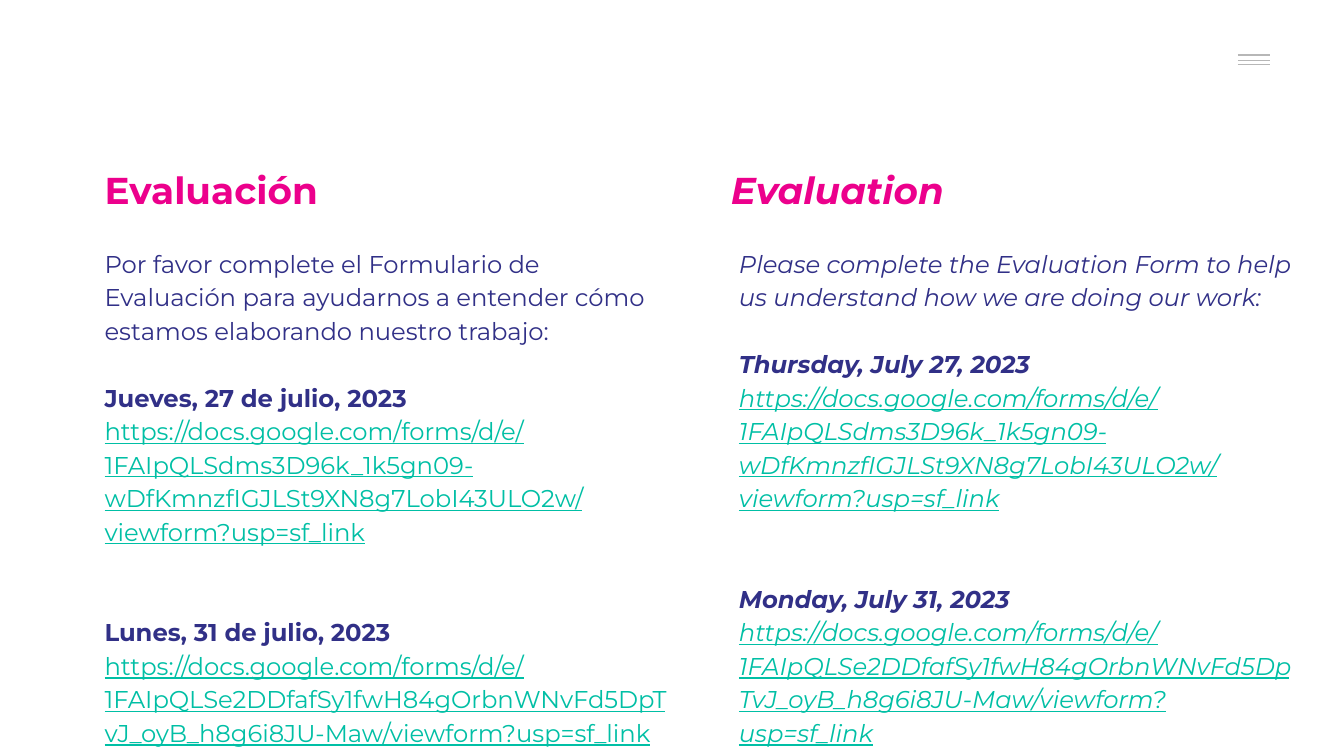
from dataclasses import dataclass

from pptx import Presentation
from pptx.dml.color import RGBColor
from pptx.enum.shapes import MSO_CONNECTOR as Connector, MSO_SHAPE as Shape
from pptx.enum.text import MSO_ANCHOR as Anchor
from pptx.oxml.ns import qn
from pptx.slide import Slide
from pptx.text.text import TextFrame
from pptx.util import Inches, Pt
from lxml.etree import SubElement

WHITE = RGBColor(0xFF, 0xFF, 0xFF)
GRAY = RGBColor(0xB7, 0xB7, 0xB7)
PINK = RGBColor(0xEC, 0x00, 0x8C)
NAVY = RGBColor(0x31, 0x30, 0x87)
TEAL = RGBColor(0x00, 0xBF, 0xA5)
FONT = "Montserrat"
LINE_PITCH = 18  # points taken by one line of body text
SLIDE_WIDTH = 10
SLIDE_HEIGHT = SLIDE_WIDTH * 9 / 16

FORMS = "https://docs.google.com/forms/d/e/"
THURSDAY_FORM = FORMS + "1FAIpQLSdms3D96k_1k5gn09-wDfKmnzfIGJLSt9XN8g7LobI43ULO2w/viewform?usp=sf_link"
MONDAY_FORM = FORMS + "1FAIpQLSe2DDfafSy1fwH84gOrbnWNvFd5DpTvJ_oyB_h8g6i8JU-Maw/viewform?usp=sf_link"


@dataclass
class Column:
    title: str
    title_left: float
    intro: str
    days: tuple[str, str]
    body_left: float
    body_width: float
    body_height: float
    italic: bool


COLUMNS = [
    Column("Evaluación", 0.68,
           "Por favor complete el Formulario de Evaluación para ayudarnos a entender "
           "cómo estamos elaborando nuestro trabajo:",
           ("Jueves, 27 de julio, 2023", "Lunes, 31 de julio, 2023"),
           0.68, 4.38, 2.12, False),
    Column("Evaluation", 5.34,
           "Please complete the Evaluation Form to help us understand how we are doing our work:",
           ("Thursday, July 27, 2023", "Monday, July 31, 2023"),
           5.4, 4.33, 3.01, True),
]


def add_text_frame(slide: Slide, left: float, top: float, width: float, height: float,
                   fill: RGBColor | None = None) -> TextFrame:
    box = slide.shapes.add_textbox(Inches(left), Inches(top), Inches(width), Inches(height))
    if fill is not None:
        box.fill.solid()
        box.fill.fore_color.rgb = fill
    frame = box.text_frame
    frame.word_wrap = True
    frame.vertical_anchor = Anchor.TOP
    frame.margin_left = frame.margin_right = Inches(0.1)
    frame.margin_top = frame.margin_bottom = Inches(0.1)
    return frame


def add_paragraph(frame: TextFrame, text: str, size: float, color: RGBColor, *,
                  bold: bool = False, italic: bool = False, underline: bool = False,
                  lines_before: int = 0, spacing: float = 1.0) -> None:
    first = frame.paragraphs[0]
    paragraph = frame.add_paragraph() if first.runs else first
    paragraph.text = text
    paragraph.line_spacing = spacing
    if lines_before:
        paragraph.space_before = Pt(lines_before * LINE_PITCH)
    font = paragraph.font
    font.name, font.size, font.color.rgb = FONT, Pt(size), color
    font.bold, font.italic, font.underline = bold, italic, underline


def add_column(slide: Slide, column: Column) -> None:
    title = add_text_frame(slide, column.title_left, 1.14, 4.22, 0.59, WHITE)
    add_paragraph(title, column.title, 20, PINK, bold=True, italic=column.italic)

    body = add_text_frame(slide, column.body_left, 1.72, column.body_width, column.body_height)
    add_paragraph(body, column.intro, 13, NAVY, italic=column.italic, spacing=1.15)
    for day, form, gap in zip(column.days, (THURSDAY_FORM, MONDAY_FORM), (1, 2)):
        add_paragraph(body, day, 13, NAVY, bold=True, italic=column.italic,
                      lines_before=gap, spacing=1.15)
        add_paragraph(body, form, 13, TEAL, italic=column.italic, underline=True, spacing=1.15)


def add_menu_icon(slide: Slide) -> None:
    panel = slide.shapes.add_shape(Shape.RECTANGLE, Inches(8.86), Inches(0.17),
                                   Inches(0.94), Inches(0.5))
    panel.shadow.inherit = False
    panel.fill.solid()
    panel.fill.fore_color.rgb = WHITE
    panel.line.fill.background()
    for y in (0.41, 0.45, 0.48):
        bar = slide.shapes.add_connector(Connector.STRAIGHT, Inches(9.21), Inches(y),
                                         Inches(9.45), Inches(y))
        bar.line.color.rgb = GRAY
        bar.line.width = Pt(0.75)
        SubElement(bar.element.spPr, qn("a:effectLst"))


def main() -> None:
    presentation = Presentation()
    presentation.slide_width = Inches(SLIDE_WIDTH)
    presentation.slide_height = Inches(SLIDE_HEIGHT)
    slide = presentation.slides.add_slide(presentation.slide_layouts[6])
    slide.background.fill.solid()
    slide.background.fill.fore_color.rgb = WHITE

    # Menu mark in the top corner
    add_menu_icon(slide)

    # Spanish and English columns
    for column in COLUMNS:
        add_column(slide, column)

    presentation.save("out.pptx")


if __name__ == "__main__":
    main()
